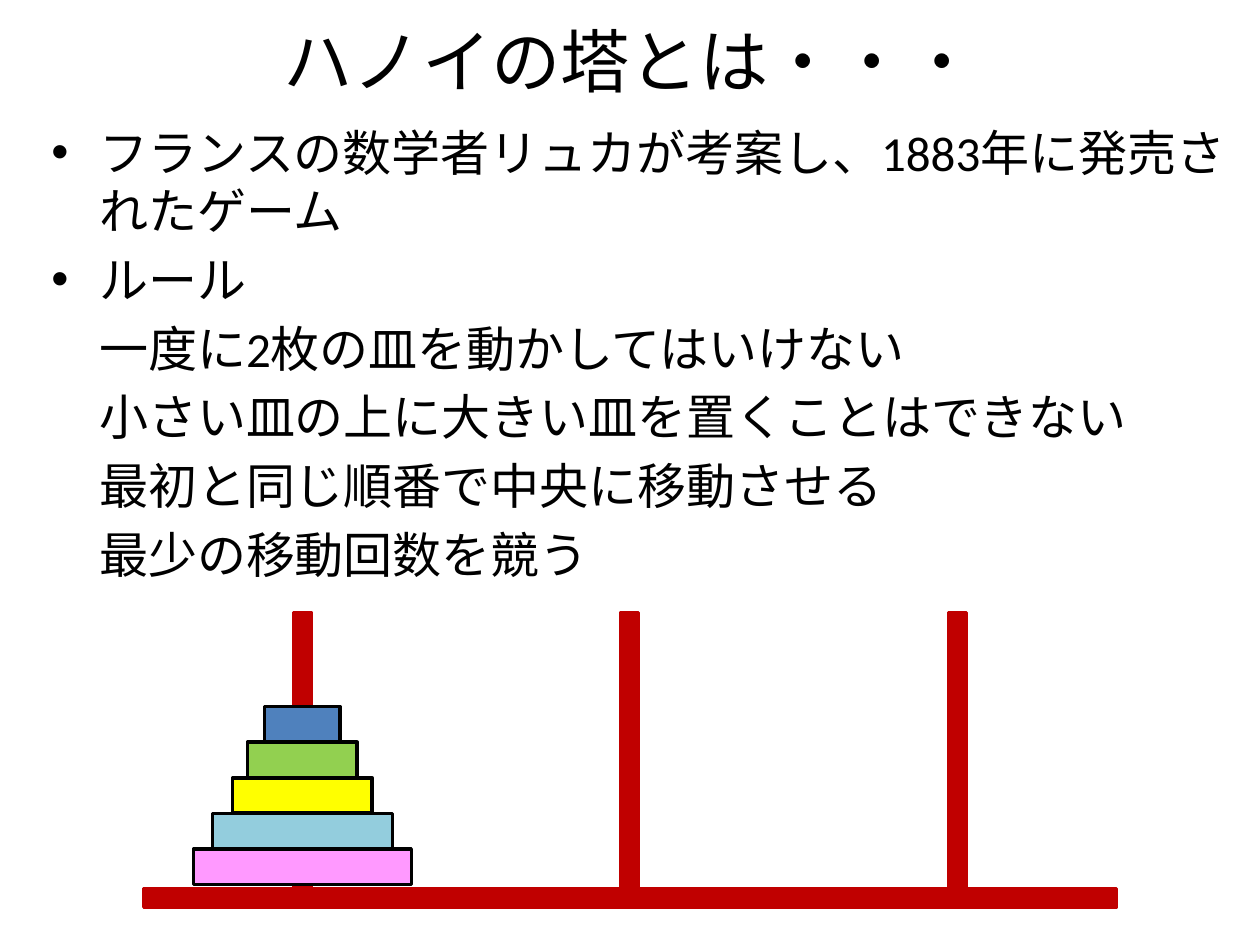
from lxml import etree
from pptx import Presentation
from pptx.dml.color import RGBColor
from pptx.enum.shapes import MSO_SHAPE
from pptx.enum.text import MSO_ANCHOR, PP_ALIGN
from pptx.oxml.ns import qn
from pptx.util import Inches, Pt

RECT = MSO_SHAPE.RECTANGLE
CENTER = PP_ALIGN.CENTER
MIDDLE = MSO_ANCHOR.MIDDLE

FONT = "Calibri"
COLORS = {
    "text": "000000",
    "stand": "C00000",
    "outline": "000000",
    "pink": "FF99FF",
    "light_blue": "93CDDD",
    "yellow": "FFFF00",
    "green": "92D050",
    "blue": "4F81BD",
}
ITEMS = [  # (text, has bullet)
    ("フランスの数学者リュカが考案し、1883年に発売されたゲーム", True),
    ("ルール", True),
    ("一度に2枚の皿を動かしてはいけない", False),
    ("小さい皿の上に大きい皿を置くことはできない", False),
    ("最初と同じ順番で中央に移動させる", False),
    ("最少の移動回数を競う", False),
]
DISKS = [  # (width, colour), from the bottom up
    (1.73, "pink"),
    (1.43, "light_blue"),
    (1.11, "yellow"),
    (0.87, "green"),
    (0.6, "blue"),
]


def rgb(name):
    return RGBColor.from_string(COLORS[name])


def add_text_frame(s, x, y, w, h):
    tf = s.shapes.add_textbox(Inches(x), Inches(y), Inches(w), Inches(h)).text_frame
    tf.word_wrap = True
    return tf


def add_run(p, text, size):
    r = p.add_run()
    r.text = text
    r.font.name = FONT
    r.font.size = Pt(size)
    r.font.color.rgb = rgb("text")


def set_indent(p, bullet):
    """Indent the paragraph, hanging its first line if it has a bullet."""
    pPr = p._p.get_or_add_pPr()
    indent = Inches(0.38)
    pPr.set("marL", str(indent))
    if bullet:
        pPr.set("indent", str(-indent))
        etree.SubElement(pPr, qn("a:buFont"), typeface="Arial")
        etree.SubElement(pPr, qn("a:buChar"), char="•")


def add_rect(s, x, y, w, h, fill, line):
    sp = s.shapes.add_shape(RECT, Inches(x), Inches(y), Inches(w), Inches(h))
    sp.shadow.inherit = False
    sp.fill.solid()
    sp.fill.fore_color.rgb = rgb(fill)
    sp.line.color.rgb = rgb(line)
    sp.line.width = Pt(2)


def add_title(s, x, y, w, h):
    tf = add_text_frame(s, x, y, w, h)
    tf.vertical_anchor = MIDDLE
    p = tf.paragraphs[0]
    p.alignment = CENTER
    add_run(p, "ハノイの塔とは・・・", 39.6)


def add_rules(s, x, y, w, h):
    tf = add_text_frame(s, x, y, w, h)
    for i, (text, bullet) in enumerate(ITEMS):
        p = tf.add_paragraph() if i else tf.paragraphs[0]
        p.space_before = Pt(5.6)
        set_indent(p, bullet)
        add_run(p, text, 28)


def add_tower(s, x, y, w, h):
    """Three poles on a base, with the disks stacked on the left pole."""
    base_h, pole_w, pole_gap = 0.15, 0.14, 2.6
    disk_h, disk_step = 0.28, 0.283
    base_y = y + h - base_h
    add_rect(s, x, base_y, w, base_h, "stand", "stand")

    first_pole = x + w / 2 - pole_gap
    for i in range(3):
        pole_x = first_pole + i * pole_gap - pole_w / 2
        add_rect(s, pole_x, y, pole_w, base_y - y, "stand", "stand")

    for i, (disk_w, color) in enumerate(DISKS):
        disk_y = base_y - 0.03 - disk_h - i * disk_step
        add_rect(s, first_pole - disk_w / 2, disk_y, disk_w, disk_h, color, "outline")


def main():
    prs = Presentation()
    prs.slide_width, prs.slide_height = Inches(10), Inches(7.5)
    s = prs.slides.add_slide(prs.slide_layouts[6])
    add_title(s, 0.5, 0.13, 9, 0.69)
    add_rules(s, 0.31, 0.92, 9.53, 3.86)
    add_tower(s, 1.14, 4.86, 7.72, 2.34)
    prs.save("out.pptx")


if __name__ == "__main__":
    main()
